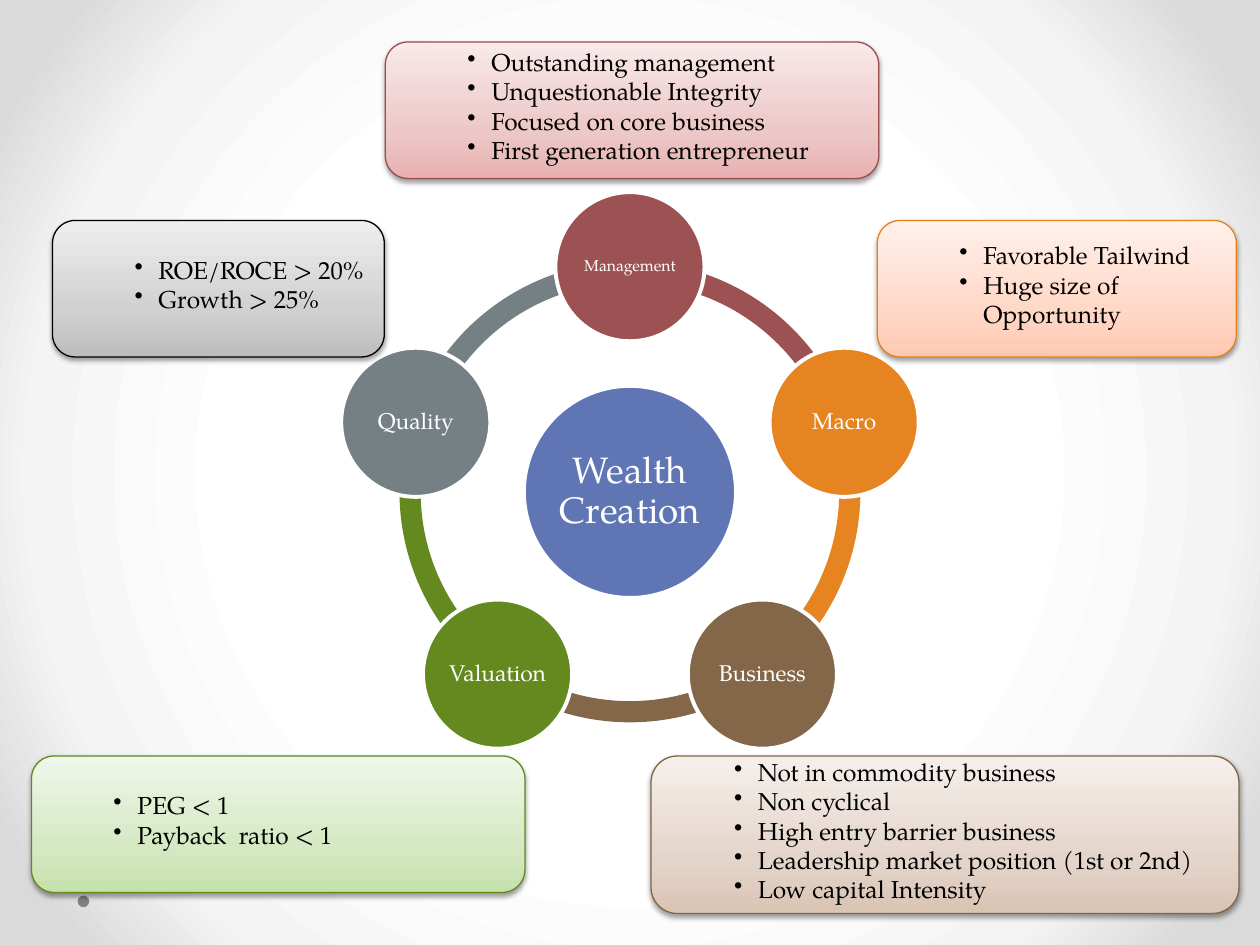
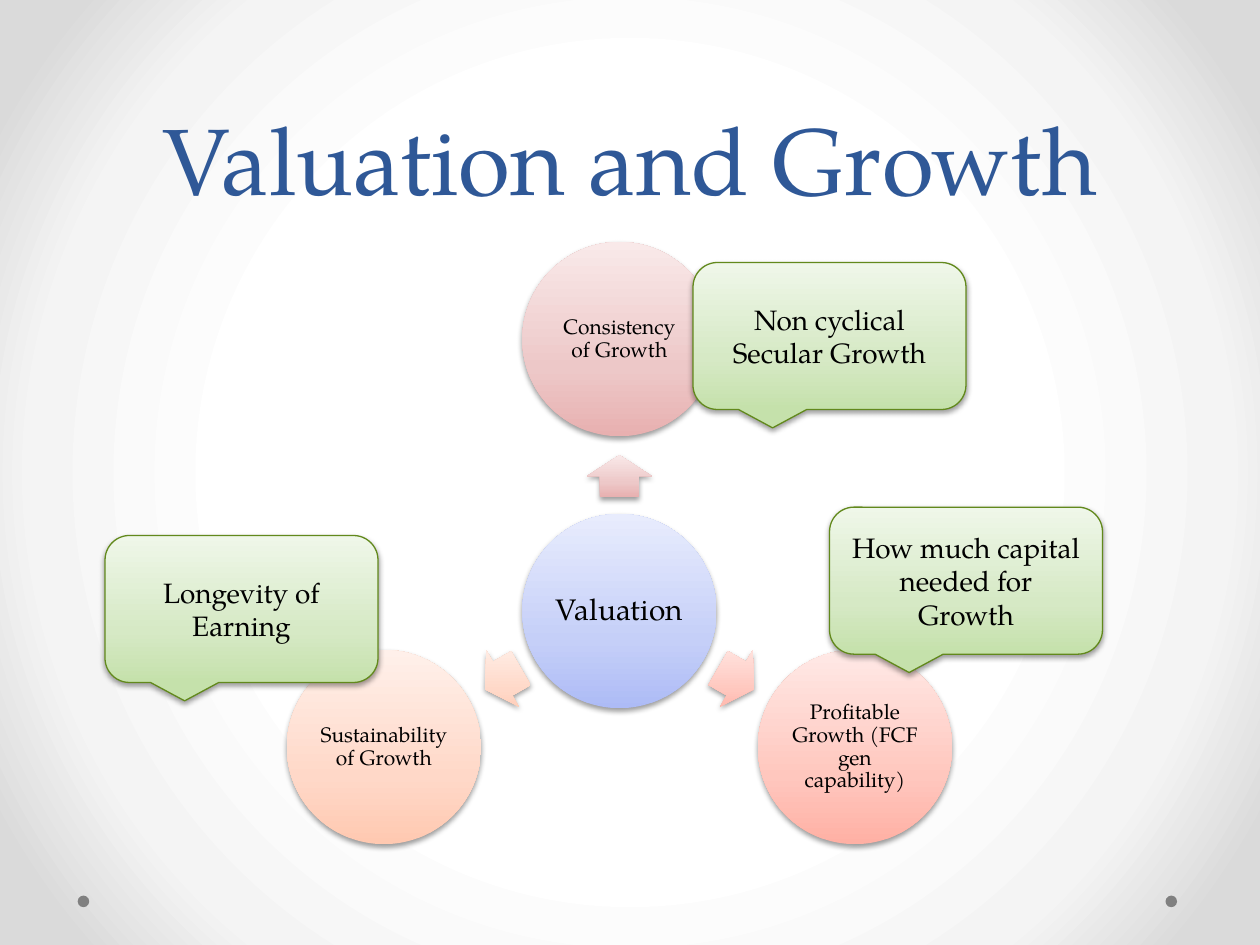
from dataclasses import dataclass
from math import cos, radians, sin

from lxml.etree import SubElement
from pptx import Presentation
from pptx.dml.color import RGBColor
from pptx.enum.shapes import MSO_SHAPE as Shape
from pptx.enum.text import MSO_ANCHOR as Anchor, PP_ALIGN as Align
from pptx.oxml import parse_xml
from pptx.oxml.ns import nsdecls, qn
from pptx.util import Inches, Pt

COLUMNS, ROWS = 120, 90
FONT = "TeX Gyre Pagella"

WHITE = RGBColor(0xFF, 0xFF, 0xFF)
BLACK = RGBColor(0x00, 0x00, 0x00)
PALE_GRAY = RGBColor(0xF4, 0xF4, 0xF4)
EDGE_GRAY = RGBColor(0xDA, 0xDA, 0xDA)
DOT_GRAY = RGBColor(0x80, 0x80, 0x80)
TITLE_BLUE = RGBColor(0x2F, 0x58, 0x97)
BLUE = RGBColor(0x60, 0x76, 0xB4)
RED = RGBColor(0x9C, 0x52, 0x52)
ORANGE = RGBColor(0xE6, 0x84, 0x22)
BROWN = RGBColor(0x84, 0x66, 0x48)
GREEN = RGBColor(0x63, 0x89, 0x1F)
SLATE = RGBColor(0x75, 0x80, 0x85)
RED_EDGE = RGBColor(0x9A, 0x4E, 0x4E)
ORANGE_EDGE = RGBColor(0xE6, 0x81, 0x1C)
BROWN_EDGE = RGBColor(0x83, 0x64, 0x45)
GREEN_EDGE = RGBColor(0x62, 0x89, 0x1C)

# Each tint runs from the bottom of a shape to its top.
RED_TINT = (RGBColor(0xE8, 0xB0, 0xB0), RGBColor(0xED, 0xC8, 0xC8), RGBColor(0xF9, 0xE9, 0xE9))
GRAY_TINT = (RGBColor(0xBD, 0xBD, 0xBD), RGBColor(0xD1, 0xD1, 0xD1), RGBColor(0xEE, 0xEE, 0xEE))
GREEN_TINT = (RGBColor(0xC5, 0xE1, 0xAB), RGBColor(0xD6, 0xE9, 0xC5), RGBColor(0xEF, 0xF7, 0xE9))
ORANGE_TINT = (RGBColor(0xFF, 0xC9, 0xB1), RGBColor(0xFF, 0xD8, 0xC8), RGBColor(0xFF, 0xF0, 0xEA))
BROWN_TINT = (RGBColor(0xDA, 0xC4, 0xB4), RGBColor(0xE4, 0xD5, 0xCB), RGBColor(0xF5, 0xEF, 0xEB))
BLUE_TINT = (RGBColor(0xAD, 0xBB, 0xF6), RGBColor(0xC5, 0xCF, 0xF8), RGBColor(0xE8, 0xEC, 0xFD))
CORAL_TINT = (RGBColor(0xFF, 0xB0, 0xA4), RGBColor(0xFF, 0xC7, 0xBE), RGBColor(0xFF, 0xE9, 0xE6))

TINT_STOPS = (0, 35, 100)
UPWARD = '<a:lin ang="16200000" scaled="0"/>'
FROM_CENTRE = ('<a:path path="circle"><a:fillToRect l="50000" t="50000" '
               'r="50000" b="50000"/></a:path>')


@dataclass
class Pillar:
    name: str
    size: int
    color: RGBColor
    tint: tuple
    edge: RGBColor
    box: tuple
    points: tuple


@dataclass
class Driver:
    name: str
    tint: tuple
    angle: int


def apply_gradient(fill, element, stops, colors, direction):
    fill.solid()
    solid = element.find(".//" + qn("a:solidFill"))
    steps = "".join(f'<a:gs pos="{stop * 1000}"><a:srgbClr val="{color}"/></a:gs>'
                    for stop, color in zip(stops, colors))
    gradient = parse_xml(f'<a:gradFill {nsdecls("a")} rotWithShape="0">'
                         f'<a:gsLst>{steps}</a:gsLst>{direction}</a:gradFill>')
    solid.getparent().replace(solid, gradient)


def add_soft_shadow(shape):
    effects = shape.element.spPr.find(qn("a:effectLst"))
    effects.append(parse_xml(
        f'<a:outerShdw {nsdecls("a")} blurRad="{Pt(3.1)}" dist="{Pt(1.6)}" dir="5400000" '
        'rotWithShape="0"><a:srgbClr val="000000"><a:alpha val="38000"/></a:srgbClr>'
        '</a:outerShdw>'))


def around(centre, distance, angle):
    x, y = centre
    return x + distance * cos(radians(angle)), y + distance * sin(radians(angle))


class Deck:
    """Holds the shared style and the slide being filled; lengths are grid columns and rows."""

    def __init__(self):
        self.prs = Presentation()
        self.prs.slide_width, self.prs.slide_height = Inches(10), Inches(7.5)
        self.slide = None

    def col(self, count):
        return round(self.prs.slide_width * count / COLUMNS)

    def row(self, count):
        return round(self.prs.slide_height * count / ROWS)

    def area(self, left, top, width, height):
        return self.col(left), self.row(top), self.col(width), self.row(height)

    def new_slide(self):
        self.slide = self.prs.slides.add_slide(self.prs.slide_layouts[6])
        background = self.slide.background.fill
        apply_gradient(background, self.slide.element, (50, 76, 92),
                       (WHITE, PALE_GRAY, EDGE_GRAY), FROM_CENTRE)
        for left in (111, 7.4):
            self.shape(Shape.OVAL, (left, 85.3, 1.1, 1.1), DOT_GRAY)

    def shape(self, kind, box, paint, edge=None, edge_width=0.75):
        """Add a preset shape; a colour paints it flat, a tint gives gradient and shadow."""
        shape = self.slide.shapes.add_shape(kind, *self.area(*box))
        shape.shadow.inherit = False
        if isinstance(paint, RGBColor):
            shape.fill.solid()
            shape.fill.fore_color.rgb = paint
        else:
            apply_gradient(shape.fill, shape.element, TINT_STOPS, paint, UPWARD)
            add_soft_shadow(shape)
        if edge is None:
            shape.line.fill.background()
        else:
            shape.line.color.rgb = edge
            shape.line.width = Pt(edge_width)
        return shape

    def centred(self, kind, centre, width, height, paint, edge=None, edge_width=0.75):
        x, y = centre
        box = (x - width / 2, y - height / 2, width, height)
        return self.shape(kind, box, paint, edge, edge_width)

    def add_text(self, paragraph, text, size, color, align=Align.CENTER):
        paragraph.alignment = align
        run = paragraph.add_run()
        run.text = text
        run.font.name, run.font.size = FONT, Pt(size)
        run.font.color.rgb = color

    def frame(self, shape, anchor=Anchor.MIDDLE, inset=None):
        frame = shape.text_frame
        frame.word_wrap = True
        frame.vertical_anchor = anchor
        if inset is not None:
            frame.margin_left = frame.margin_right = Inches(inset)
            frame.margin_top = frame.margin_bottom = Inches(inset)
        return frame

    def title(self, text):
        box = self.slide.shapes.add_textbox(*self.area(6, 0, 108, 21))
        paragraph = self.frame(box, Anchor.BOTTOM).paragraphs[0]
        paragraph.line_spacing = Pt(58)
        self.add_text(paragraph, text, 54, TITLE_BLUE)

    def disc(self, centre, diameter, paint, text, size, color, edge=None):
        disc = self.centred(Shape.OVAL, centre, diameter, diameter, paint, edge, 2.25)
        paragraph = self.frame(disc, inset=0.02).paragraphs[0]
        paragraph.line_spacing = 0.9
        self.add_text(paragraph, text, size, color)

    def ring_arc(self, centre, diameter, start, sweep, color):
        arc = self.centred(Shape.BLOCK_ARC, centre, diameter, diameter, color)
        for index, angle in enumerate((start, start + sweep)):
            arc.adjustments[index] = angle % 360 * 0.6  # 60000ths of a degree over 100000
        arc.adjustments[2] = 0.046

    def arrow(self, centre, angle, tint):
        arrow = self.centred(Shape.RIGHT_ARROW, centre, 4, 6.2, tint)
        arrow.rotation = angle % 360
        arrow.adjustments[0], arrow.adjustments[1] = 0.6, 0.5

    def bullet_box(self, box, tint, edge, points):
        panel = self.shape(Shape.ROUNDED_RECTANGLE, box, tint, edge)
        frame = self.frame(panel)
        frame.margin_top, frame.margin_bottom = 0, Inches(0.07)
        for index, point in enumerate(points):
            paragraph = frame.add_paragraph() if index else frame.paragraphs[0]
            self.add_text(paragraph, point, 14, BLACK, Align.LEFT)
            paragraph.level = 1
            properties = paragraph._p.get_or_add_pPr()
            properties.set("marL", str(Inches(0.69)))
            properties.set("indent", str(Inches(-0.19)))
            SubElement(properties, qn("a:buChar"), char="•")

    def callout(self, left, top, text):
        bubble = self.shape(Shape.ROUNDED_RECTANGULAR_CALLOUT, (left, top, 26, 14),
                            GREEN_TINT, GREEN_EDGE)
        self.add_text(self.frame(bubble).paragraphs[0], text, 16, BLACK)


PILLARS = (
    Pillar("Management", 9, RED, RED_TINT, RED_EDGE, (36.7, 4, 47, 13),
           ("Outstanding management", "Unquestionable Integrity",
            "Focused on core business", "First generation entrepreneur")),
    Pillar("Macro", 13, ORANGE, ORANGE_TINT, ORANGE_EDGE, (83.55, 21, 34.2, 13),
           ("Favorable Tailwind", "Huge size of Opportunity")),
    Pillar("Business", 13, BROWN, BROWN_TINT, BROWN_EDGE, (62, 72, 56, 15),
           ("Not in commodity business", "Non cyclical", "High entry barrier business",
            "Leadership market position (1st or 2nd)", "Low capital Intensity")),
    Pillar("Valuation", 13, GREEN, GREEN_TINT, GREEN_EDGE, (3, 72, 47, 13),
           ("PEG < 1", "Payback  ratio < 1")),
    Pillar("Quality", 13, SLATE, GRAY_TINT, BLACK, (5, 21, 31.6, 13),
           ("ROE/ROCE > 20%", "Growth > 25%")),
)

DRIVERS = (
    Driver("Consistency of Growth", RED_TINT, -90),
    Driver("Profitable Growth (FCF gen capability)", CORAL_TINT, 30),
    Driver("Sustainability of Growth", ORANGE_TINT, 150),
)

CALLOUTS = (
    (79, 48.3, "How much capital needed for Growth"),
    (66, 25, "Non cyclical Secular Growth"),
    (10, 51, "Longevity of Earning"),
)


def wealth_creation(deck):
    deck.new_slide()
    hub = (60, 46.85)
    sweep = 360 / len(PILLARS)
    placed = [(pillar, -90 + sweep * index) for index, pillar in enumerate(PILLARS)]
    for pillar, angle in reversed(placed):
        deck.ring_arc(hub, 43.9, angle, sweep, pillar.color)
    deck.disc(hub, 20.2, BLUE, "Wealth Creation", 21, WHITE, WHITE)
    for pillar, angle in placed:
        deck.disc(around(hub, 21.45, angle), 14.2, pillar.color,
                  pillar.name, pillar.size, WHITE, WHITE)
    for pillar in PILLARS:
        deck.bullet_box(pillar.box, pillar.tint, pillar.edge, pillar.points)


def valuation_and_growth(deck):
    deck.new_slide()
    deck.title("Valuation and Growth")
    hub = (59, 58.2)
    deck.disc(hub, 18.5, BLUE_TINT, "Valuation", 17, BLACK)
    for driver in DRIVERS:
        deck.arrow(around(hub, 12.85, driver.angle), driver.angle, driver.tint)
        deck.disc(around(hub, 25.9, driver.angle), 18.5, driver.tint, driver.name, 12, BLACK)
    for left, top, text in CALLOUTS:
        deck.callout(left, top, text)


def main():
    deck = Deck()
    wealth_creation(deck)
    valuation_and_growth(deck)
    deck.prs.save("out.pptx")


if __name__ == "__main__":
    main()
